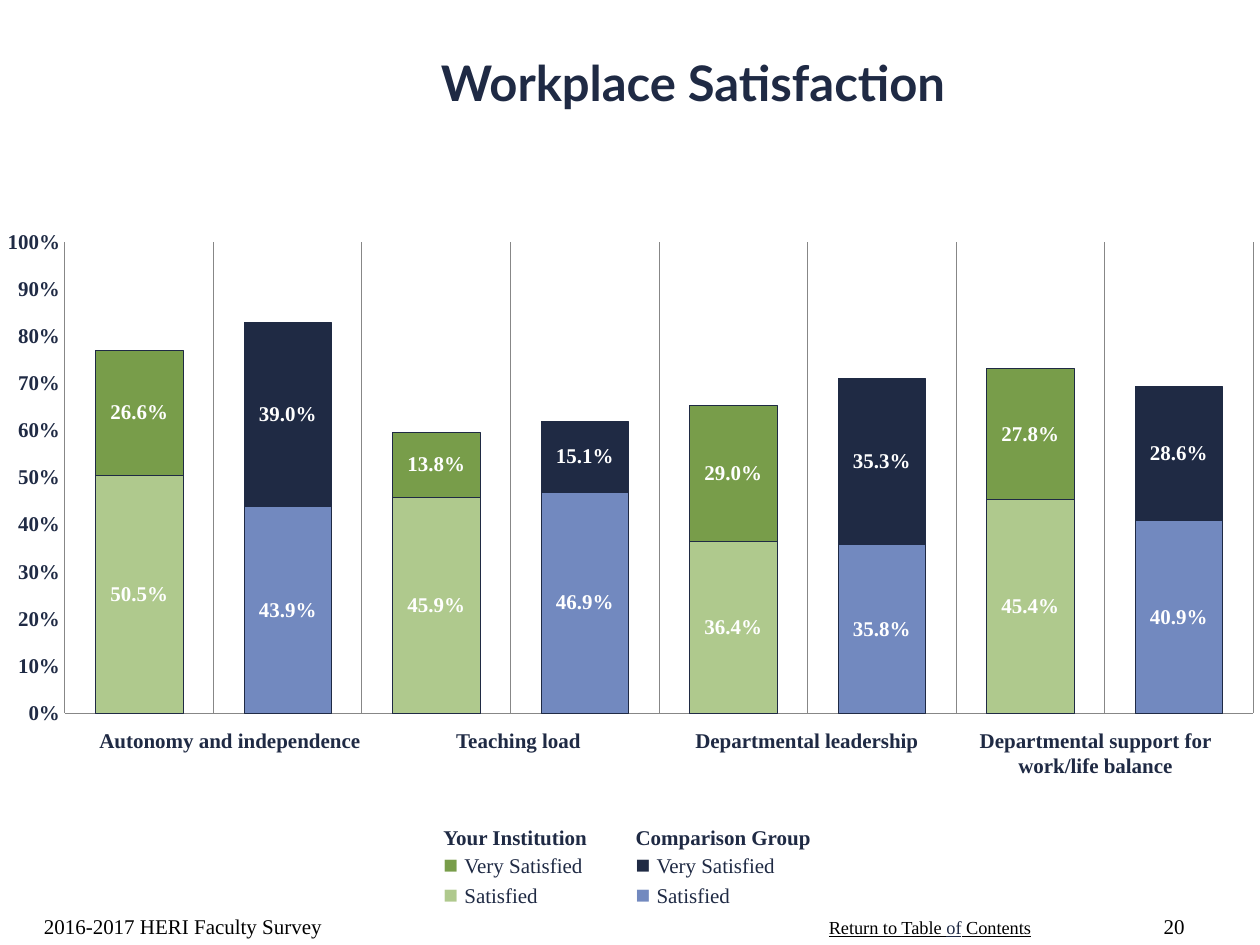
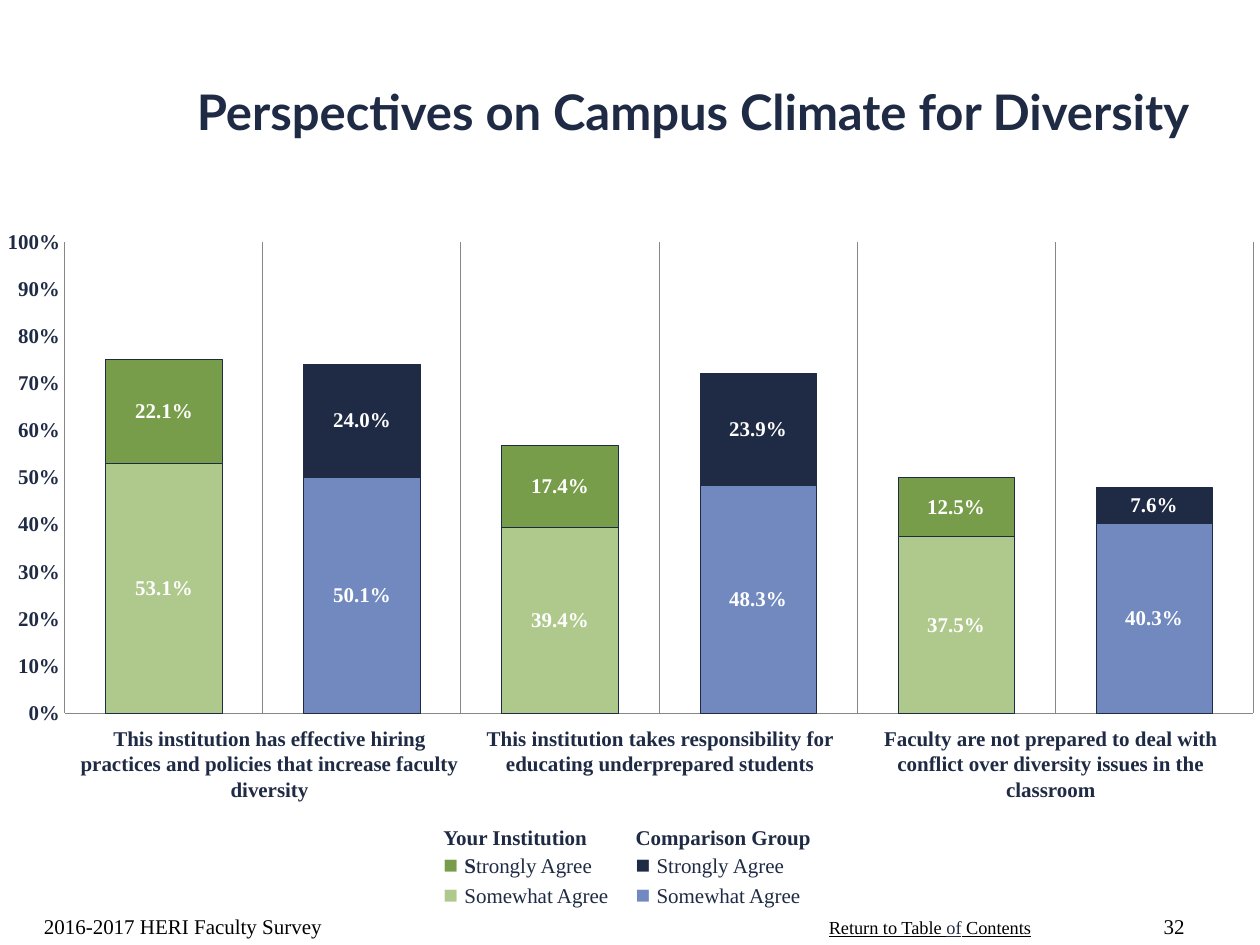
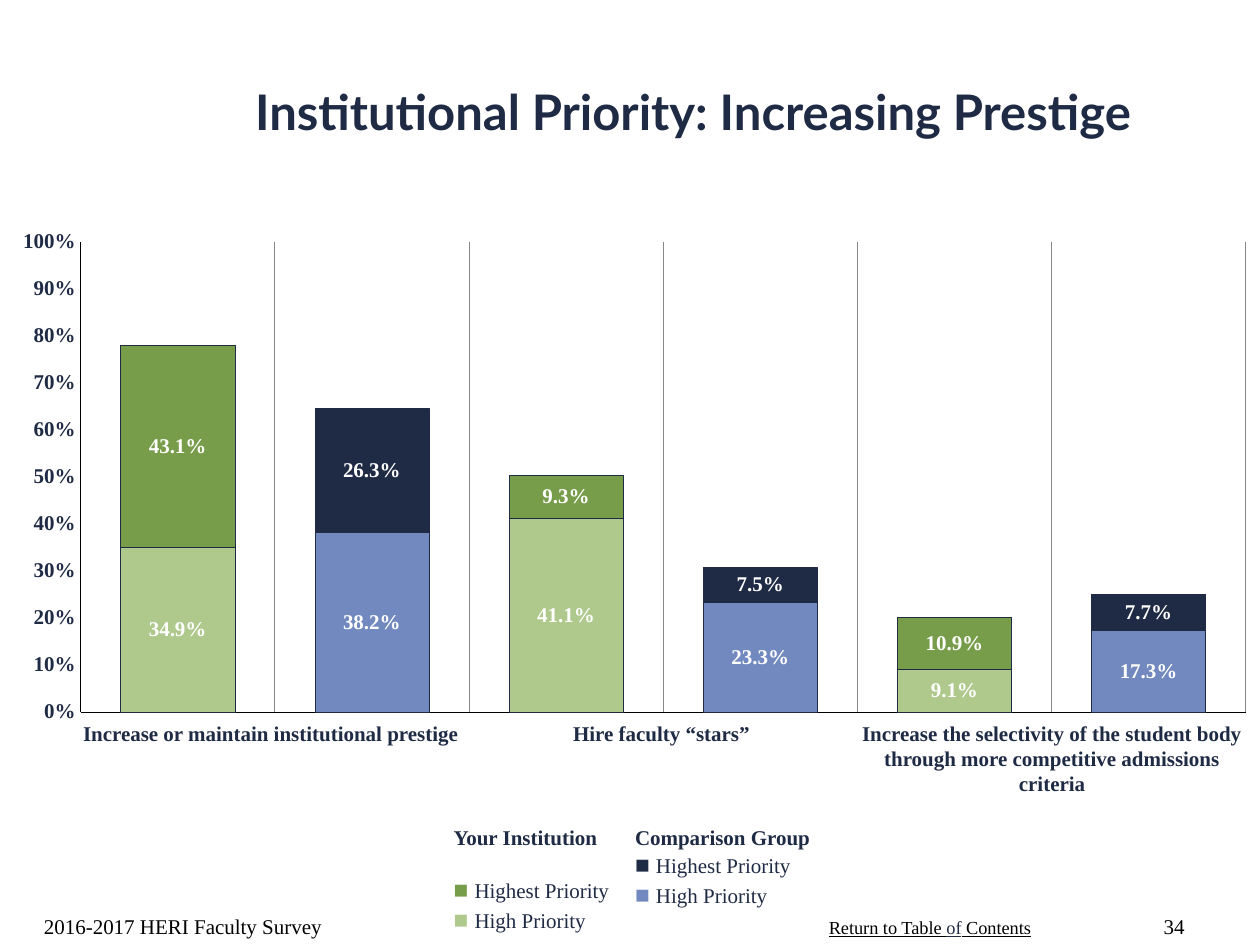
from dataclasses import dataclass

from lxml import etree
from pptx import Presentation
from pptx.chart.data import CategoryChartData
from pptx.dml.color import RGBColor
from pptx.enum.chart import XL_CHART_TYPE, XL_TICK_LABEL_POSITION, XL_TICK_MARK
from pptx.enum.text import MSO_ANCHOR, PP_ALIGN
from pptx.oxml.ns import qn
from pptx.util import Pt

# Colours
NAVY = RGBColor(0x1F, 0x2A, 0x44)
BLUE = RGBColor(0x72, 0x89, 0xBF)
GREEN = RGBColor(0x78, 0x9D, 0x4A)
LIGHT_GREEN = RGBColor(0xAF, 0xC9, 0x8D)
GRAY = RGBColor(0x87, 0x87, 0x87)
BLACK = RGBColor(0, 0, 0)
WHITE = RGBColor(0xFF, 0xFF, 0xFF)

# Text formats
SERIF = "Times New Roman"
TITLE = dict(name="Lato", size=Pt(28), bold=True, color=NAVY)
BODY = dict(name=SERIF, size=Pt(12), bold=False, color=NAVY)
STRONG = {**BODY, "bold": True}
MARKER = {**BODY, "size": Pt(14)}
FOOTER = {**BODY, "color": BLACK}
LINK = dict(name=SERIF, size=Pt(10.5), underline=True, color=BLACK)

# Text insets in points: left, top, right, bottom
INSETS = (7.2, 3.6, 7.2, 3.6)
NO_INSETS = (0, 0, 0, 0)

# Each series: its name, the institution's colour and the comparison colour
SERIES = [("Series 1", LIGHT_GREEN, BLUE), ("Series 2", GREEN, NAVY)]


@dataclass
class Survey:
    """Content and geometry (in points) of one survey slide."""
    title: str
    page: str
    levels: tuple           # upper and lower answer
    lower: list
    upper: list
    captions: list
    caption_box: tuple      # left, top, width of the caption row
    title_height: float = 102.2
    legend_left: float = 253.4
    legend_column: float = 109.8
    legend_gap: float = 0   # extra space below "Your Institution"
    bold_letters: int = 0   # bold letters at the start of the first answer
    chart_width: float = 712
    plot: tuple = (0.045, 0.043, 0.955, 0.936)
    axis_color: RGBColor = GRAY
    axis_width: float = 0.5


SURVEYS = [
    Survey(
        title="Workplace Satisfaction", page="20",
        levels=("Very Satisfied", "Satisfied"),
        lower=[0.505, 0.439, 0.459, 0.469, 0.364, 0.358, 0.454, 0.409],
        upper=[0.266, 0.39, 0.138, 0.151, 0.29, 0.353, 0.278, 0.286],
        captions=["Autonomy and independence", "Teaching load",
                  "Departmental leadership",
                  "Departmental support for work/life balance"],
        caption_box=(49, 415.5, 659.5), title_height=69),
    Survey(
        title="Perspectives on Campus Climate for Diversity", page="32",
        levels=("Strongly Agree", "Somewhat Agree"),
        lower=[0.531, 0.501, 0.394, 0.483, 0.375, 0.403],
        upper=[0.221, 0.24, 0.174, 0.239, 0.125, 0.076],
        captions=["This institution has effective hiring practices and "
                  "policies that increase faculty diversity",
                  "This institution takes responsibility for educating "
                  "underprepared students",
                  "Faculty are not prepared to deal with conflict over "
                  "diversity issues in the classroom"],
        caption_box=(42.5, 414.7, 669.6), bold_letters=1),
    Survey(
        title="Institutional Priority: Increasing Prestige", page="34",
        levels=("Highest Priority", "High Priority"),
        lower=[0.349, 0.382, 0.411, 0.233, 0.091, 0.173],
        upper=[0.431, 0.263, 0.093, 0.075, 0.109, 0.077],
        captions=["Increase or maintain institutional prestige",
                  "Hire faculty “stars”",
                  "Increase the selectivity of the student body through more "
                  "competitive admissions criteria"],
        caption_box=(43.2, 411.8, 669.6),
        legend_left=259.2, legend_column=103.7, legend_gap=14.3,
        chart_width=707.8, plot=(0.059, 0.042, 0.941, 0.933),
        axis_color=BLACK, axis_width=0.19),
]


def set_format(target, values):
    for name, value in values.items():
        if name == "color":
            target.color.rgb = value
        else:
            setattr(target, name, value)


def add_text(s, box, paragraphs, align=PP_ALIGN.LEFT, anchor=MSO_ANCHOR.TOP,
             insets=INSETS, wrap=True):
    """Add a text box; each paragraph is a list of (text, format) runs."""
    tf = s.shapes.add_textbox(*map(Pt, box)).text_frame
    left, top, right, bottom = map(Pt, insets)
    set_format(tf, dict(word_wrap=wrap, vertical_anchor=anchor,
                        margin_left=left, margin_top=top,
                        margin_right=right, margin_bottom=bottom))
    for i, runs in enumerate(paragraphs):
        p = tf.paragraphs[0] if i == 0 else tf.add_paragraph()
        p.alignment = align
        for text, values in runs:
            r = p.add_run()
            r.text = text
            set_format(r.font, values)
    return tf


def add_title(s, survey):
    add_text(s, (72, 12.2, 648, survey.title_height), [[(survey.title, TITLE)]],
             align=PP_ALIGN.CENTER, anchor=MSO_ANCHOR.MIDDLE)


def add_footer(s, page):
    add_text(s, (18, 504, 228, 36), [[("2016-2017 HERI Faculty Survey", FOOTER)]],
             anchor=MSO_ANCHOR.BOTTOM)
    add_text(s, (466.5, 520, 131, 20),
             [[("Return to Table ", LINK), ("of", {**LINK, "color": NAVY}),
               (" Contents", LINK)]], wrap=False)
    add_text(s, (648, 504, 36, 36), [[(page, FOOTER)]],
             align=PP_ALIGN.RIGHT, anchor=MSO_ANCHOR.BOTTOM)


def set_plot_layout(chart, frame):
    """Fix the inner plot area as fractions of the chart."""
    area = chart._chartSpace.chart.plotArea
    for old in area.findall(qn("c:layout")):
        area.remove(old)
    layout = etree.Element(qn("c:layout"))
    manual = etree.SubElement(layout, qn("c:manualLayout"))
    values = [("layoutTarget", "inner"), ("xMode", "edge"), ("yMode", "edge"),
              *zip("xywh", frame)]
    for tag, value in values:
        etree.SubElement(manual, qn("c:" + tag)).set("val", str(value))
    area.insert(0, layout)


def format_axes(chart, survey):
    cat, val = chart.category_axis, chart.value_axis
    for axis in (cat, val):
        set_format(axis, dict(major_tick_mark=XL_TICK_MARK.NONE,
                              minor_tick_mark=XL_TICK_MARK.NONE))
        set_format(axis.format.line, dict(color=survey.axis_color,
                                          width=Pt(survey.axis_width)))
    set_format(cat, dict(has_major_gridlines=True,
                         tick_label_position=XL_TICK_LABEL_POSITION.NONE))
    set_format(cat.major_gridlines.format.line, dict(color=GRAY, width=Pt(0.5)))
    set_format(val, dict(has_major_gridlines=False, minimum_scale=0,
                         maximum_scale=1, major_unit=0.1))
    set_format(val.tick_labels, dict(number_format="0%",
                                     number_format_is_linked=False))


def paint(fmt, color):
    fmt.fill.solid()
    fmt.fill.fore_color.rgb = color
    set_format(fmt.line, dict(color=NAVY, width=Pt(0.25)))


def add_stacked_chart(s, survey):
    data = CategoryChartData(number_format="0.0%")
    data.categories = [str(i + 1) for i in range(len(survey.lower))]
    for (name, *_), values in zip(SERIES, (survey.lower, survey.upper)):
        data.add_series(name, values)
    box = map(Pt, (4.3, 126, survey.chart_width, 288))
    chart = s.shapes.add_chart(XL_CHART_TYPE.COLUMN_STACKED, *box, data).chart
    set_format(chart, dict(has_title=False, has_legend=False))
    set_format(chart.font, STRONG)
    set_plot_layout(chart, survey.plot)
    format_axes(chart, survey)

    plot = chart.plots[0]
    set_format(plot, dict(gap_width=70, overlap=100, vary_by_categories=False))
    for series, (_, own, comparison) in zip(plot.series, SERIES):
        paint(series.format, own)
        for i in range(1, len(survey.lower), 2):
            paint(series.points[i].format, comparison)
        labels = series.data_labels
        set_format(labels, dict(show_value=True, number_format="0.0%",
                                number_format_is_linked=False))
        set_format(labels.font, {**STRONG, "color": WHITE})


def add_captions(s, survey):
    """One centred caption below each pair of columns."""
    left, top, width = survey.caption_box
    step = width / len(survey.captions)
    for i, caption in enumerate(survey.captions):
        add_text(s, (left + i * step, top, step, 58), [[(caption, STRONG)]],
                 align=PP_ALIGN.CENTER, insets=NO_INSETS)


def add_legend(s, survey):
    upper, lower = survey.levels
    columns = [("Your Institution", GREEN, LIGHT_GREEN, survey.bold_letters,
                survey.legend_gap),
               ("Comparison Group", NAVY, BLUE, 0, 0)]
    for i, (heading, dark, light, bold, gap) in enumerate(columns):
        first = [("■ ", {**MARKER, "color": dark}), (upper[bold:], BODY)]
        if bold:
            first.insert(1, (upper[:bold], STRONG))
        second = [("■ ", {**MARKER, "color": light}), (lower, BODY)]
        left = survey.legend_left + i * survey.legend_column
        tf = add_text(s, (left, 470.9, survey.legend_column, 63),
                      [[(heading, STRONG)], first, second], insets=NO_INSETS)
        tf.paragraphs[1].space_before = Pt(gap)


def main():
    prs = Presentation()
    prs.slide_width, prs.slide_height = Pt(720), Pt(540)
    for survey in SURVEYS:
        s = prs.slides.add_slide(prs.slide_layouts[6])
        add_title(s, survey)
        add_stacked_chart(s, survey)
        add_captions(s, survey)
        add_legend(s, survey)
        add_footer(s, survey.page)
    prs.save("out.pptx")


if __name__ == "__main__":
    main()
